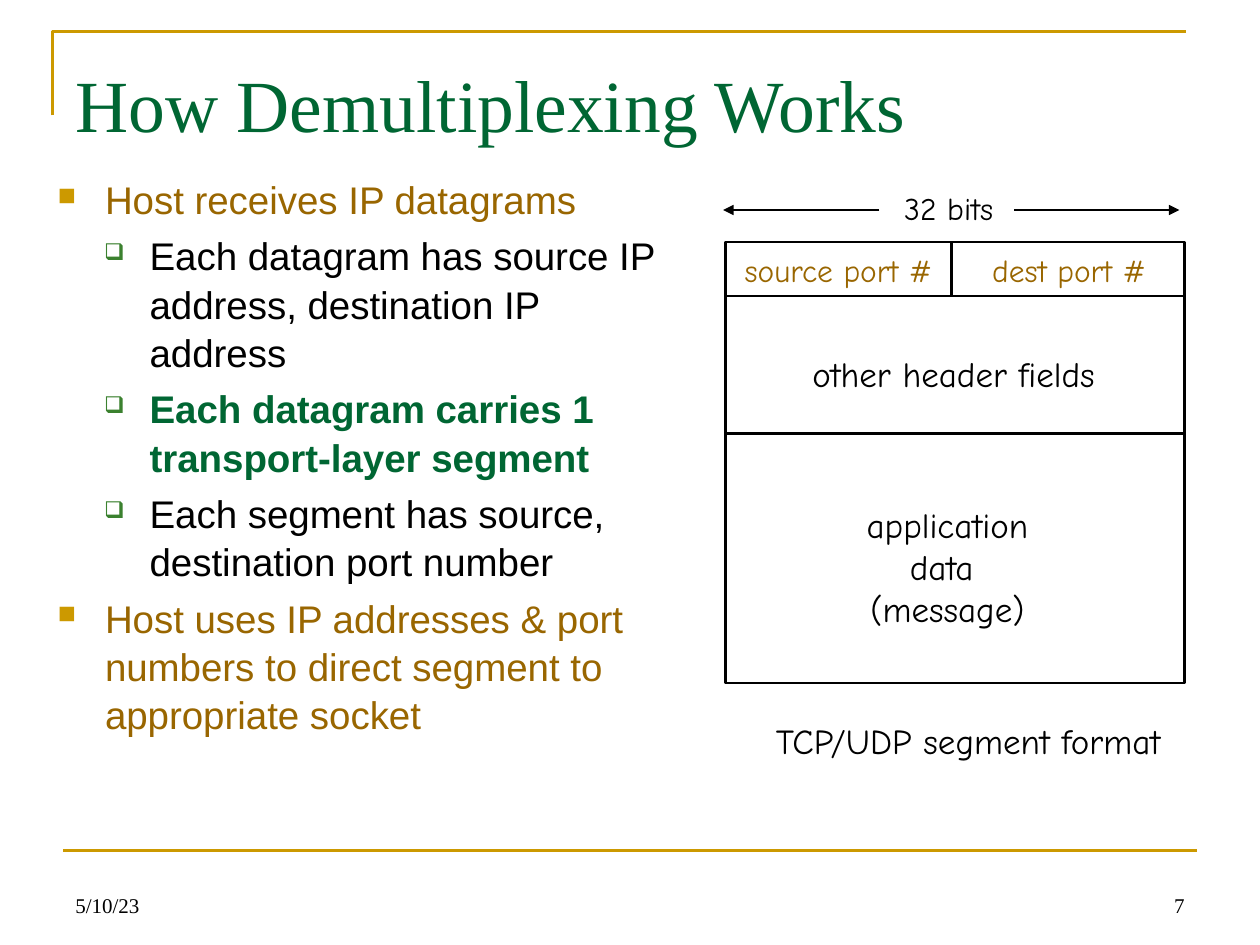
from typing import NamedTuple

from lxml import etree
from pptx import Presentation
from pptx.dml.color import RGBColor
from pptx.enum.shapes import MSO_CONNECTOR, MSO_SHAPE
from pptx.enum.text import MSO_ANCHOR, MSO_AUTO_SIZE, PP_ALIGN
from pptx.oxml.ns import qn
from pptx.util import Pt

STRAIGHT = MSO_CONNECTOR.STRAIGHT
RECTANGLE = MSO_SHAPE.RECTANGLE
LEFT, CENTER, RIGHT = PP_ALIGN.LEFT, PP_ALIGN.CENTER, PP_ALIGN.RIGHT
MIDDLE, BOTTOM = MSO_ANCHOR.MIDDLE, MSO_ANCHOR.BOTTOM
NO_RESIZE, GROW = MSO_AUTO_SIZE.NONE, MSO_AUTO_SIZE.SHAPE_TO_FIT_TEXT

COLORS = {
    "gold": "CC9900",
    "brown": "996600",
    "green": "006633",
    "bullet_green": "3B812F",
    "black": "000000",
}
SERIF, SANS, HAND = "Times New Roman", "Arial", "Comic Neue"
LINE_WIDTH = 1.5


class Area(NamedTuple):
    left: float
    top: float
    width: float
    height: float


class Label(NamedTuple):
    text: str
    area: Area
    size: float = 20
    color: str = "black"


class Rule(NamedTuple):
    start: tuple[float, float]
    end: tuple[float, float]
    color: str = "black"
    arrow: bool = False


class Level(NamedTuple):
    index: int
    margin: float
    indent: float
    mark: str
    mark_color: str
    mark_scale: int


class Bullet(NamedTuple):
    text: str
    level: Level
    color: str
    bold: bool = False


MAIN = Level(0, 27, -27, "■", "gold", 65)
SUB = Level(1, 52.5, -26, "❑", "bullet_green", 60)

BULLETS = [
    Bullet("Host receives IP datagrams", MAIN, "brown"),
    Bullet("Each datagram has source IP address, destination IP address", SUB, "black"),
    Bullet("Each datagram carries 1 transport-layer segment", SUB, "green", True),
    Bullet("Each segment has source, destination port number", SUB, "black"),
    Bullet("Host uses IP addresses & port numbers to direct segment to "
           "appropriate socket", MAIN, "brown"),
]

SEGMENT = Area(414.72, 138.24, 262.08, 252)
SEGMENT_RIGHT = SEGMENT.left + SEGMENT.width
PORTS_BOTTOM, HEADER_BOTTOM, PORT_DIVIDER = 169.2, 247.68, 543.6
ARROW_Y = 120

RULES = [
    Rule((36, 486), (684, 486), "gold"),
    Rule((SEGMENT.left, PORTS_BOTTOM), (SEGMENT_RIGHT, PORTS_BOTTOM)),
    Rule((SEGMENT.left, HEADER_BOTTOM), (SEGMENT_RIGHT, HEADER_BOTTOM)),
    Rule((PORT_DIVIDER, PORTS_BOTTOM), (PORT_DIVIDER, SEGMENT.top)),
    Rule((579.6, ARROW_Y), (673.92, ARROW_Y), arrow=True),
    Rule((502.56, ARROW_Y), (413.28, ARROW_Y), arrow=True),
]

LABELS = [
    Label("source port #", Area(413.28, 139.68, 131.76, 28.8), 18, "brown"),
    Label("dest port #", Area(553.68, 139.68, 114.48, 28.8), 18, "brown"),
    Label("32 bits", Area(504.72, 104.4, 74.88, 28.8), 18),
    Label("application\ndata \n(message)", Area(484.56, 284.4, 113.76, 79.2)),
    Label("other header fields", Area(446.4, 198, 197.28, 30.96)),
    Label("TCP/UDP segment format", Area(425.52, 407.52, 255.6, 30.96)),
]


def rgb(name: str) -> RGBColor:
    return RGBColor.from_string(COLORS[name])


def place(shape, area: Area) -> None:
    shape.left, shape.top, shape.width, shape.height = map(Pt, area)


def style_outline(shape, color: str) -> None:
    shape.shadow.inherit = False
    shape.fill.background()
    shape.line.color.rgb = rgb(color)
    shape.line.width = Pt(LINE_WIDTH)


def style_para(para, font: str, size: float, color: str, align, bold: bool = False) -> None:
    para.alignment = align
    for span in para.runs:
        span.font.name = font
        span.font.size = Pt(size)
        span.font.bold = bold
        span.font.color.rgb = rgb(color)


def add_text(page, text: str, area: Area, font: str, size: float, color: str,
             align, wrap: bool = True):
    box = page.shapes.add_textbox(*map(Pt, area))
    frame = box.text_frame
    frame.text = text
    frame.word_wrap = wrap
    frame.auto_size = NO_RESIZE if wrap else GROW
    for para in frame.paragraphs:
        style_para(para, font, size, color, align)
    return box


def add_rule(page, rule: Rule) -> None:
    line = page.shapes.add_connector(STRAIGHT, *map(Pt, rule.start + rule.end))
    line.line.color.rgb = rgb(rule.color)
    line.line.width = Pt(LINE_WIDTH)
    if rule.arrow:
        etree.SubElement(line.line._get_or_add_ln(), qn("a:tailEnd"), type="triangle")
    etree.SubElement(line._element.spPr, qn("a:effectLst"))


def add_corner(page) -> None:
    builder = page.shapes.build_freeform(Pt(30), Pt(66))
    builder.add_line_segments([(Pt(30), Pt(18)), (Pt(678), Pt(18))], close=False)
    style_outline(builder.convert_to_shape(), "gold")


def add_mark(para, level: Level) -> None:
    properties = para._p.get_or_add_pPr()
    properties.set("marL", str(Pt(level.margin)))
    properties.set("indent", str(Pt(level.indent)))
    color = etree.SubElement(properties, qn("a:buClr"))
    etree.SubElement(color, qn("a:srgbClr"), val=COLORS[level.mark_color])
    etree.SubElement(properties, qn("a:buSzPct"), val=str(level.mark_scale * 1000))
    etree.SubElement(properties, qn("a:buChar"), char=level.mark)


def add_bullets(page, bullets: list[Bullet], area: Area) -> None:
    size = 22
    frame = page.shapes.add_textbox(*map(Pt, area)).text_frame
    frame.word_wrap = True
    frame.text = "\n".join(bullet.text for bullet in bullets)
    for index, (para, bullet) in enumerate(zip(frame.paragraphs, bullets)):
        add_mark(para, bullet.level)
        para.level = bullet.level.index
        para.line_spacing = 1.05
        para.space_before = Pt(size * 0.2 if index else 0)
        style_para(para, SANS, size, bullet.color, LEFT, bullet.bold)


def add_title(page, text: str, area: Area) -> None:
    title = page.shapes.title
    place(title, area)
    frame = title.text_frame
    frame.text = text
    frame.vertical_anchor = MIDDLE
    frame.auto_size = NO_RESIZE
    style_para(frame.paragraphs[0], SERIF, 42, "green", LEFT)


def main() -> None:
    deck = Presentation()
    deck.slide_width, deck.slide_height = Pt(720), Pt(540)
    page = deck.slides.add_slide(deck.slide_layouts[5])
    add_corner(page)
    add_title(page, "How Demultiplexing Works", Area(36, 21.6, 648, 74.88))
    add_bullets(page, BULLETS, Area(25.92, 95.76, 368.64, 358.56))
    segment = page.shapes.add_shape(RECTANGLE, *map(Pt, SEGMENT))
    style_outline(segment, "black")
    for rule in RULES:
        add_rule(page, rule)
    for label in LABELS:
        add_text(page, label.text, label.area, HAND, label.size, label.color, CENTER, False)
    for text, left, align in (("5/10/23", 36, LEFT), ("7", 516, RIGHT)):
        footer = add_text(page, text, Area(left, 492, 168, 36), SERIF, 12, "black", align)
        footer.text_frame.vertical_anchor = BOTTOM
    deck.save("out.pptx")


if __name__ == "__main__":
    main()
